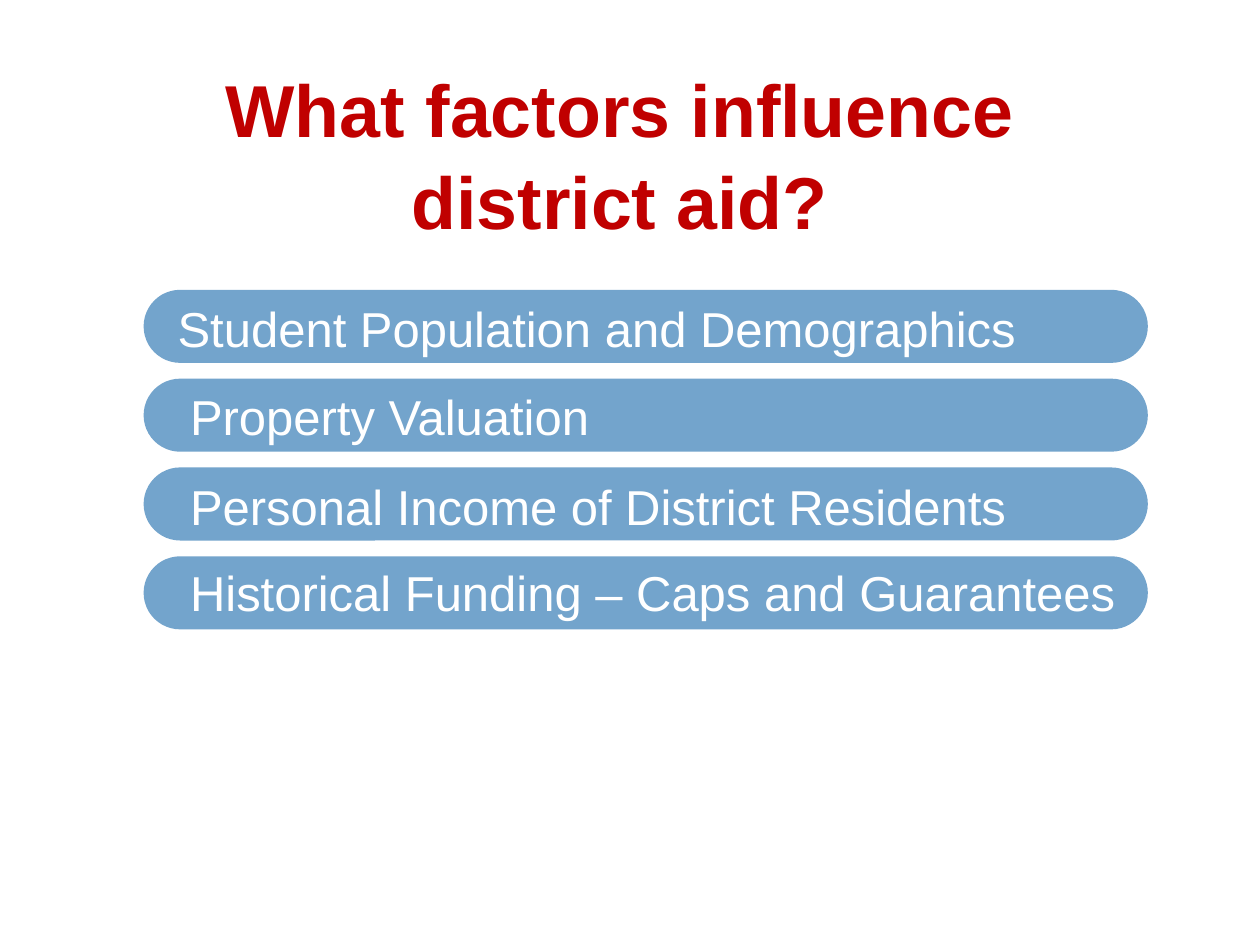
from dataclasses import dataclass

import pptx
import pptx.dml.color
import pptx.enum.shapes
import pptx.enum.text
import pptx.util

Inches = pptx.util.Inches
Align = pptx.enum.text.PP_ALIGN


@dataclass
class Label:
    text: str
    left: float
    top: float
    width: float
    height: float
    size: int = 28
    color: str = "FFFFFF"
    bold: bool = False
    align: Align = Align.LEFT
    inset_x: float = 0.1
    inset_y: float = 0.05


def color_of(value: str) -> pptx.dml.color.RGBColor:
    return pptx.dml.color.RGBColor.from_string(value)


def draw_label(slide, label: Label) -> None:
    shape = slide.shapes.add_textbox(
        Inches(label.left), Inches(label.top), Inches(label.width), Inches(label.height)
    )
    frame = shape.text_frame
    frame.word_wrap = True
    frame.vertical_anchor = pptx.enum.text.MSO_ANCHOR.MIDDLE
    frame.margin_left = frame.margin_right = Inches(label.inset_x)
    frame.margin_top = frame.margin_bottom = Inches(label.inset_y)
    paragraph = frame.paragraphs[0]
    paragraph.alignment = label.align
    paragraph.line_spacing = 1.05
    for index, line in enumerate(label.text.split("\n")):
        if index:
            paragraph.add_line_break()
        run = paragraph.add_run()
        run.text = line
        run.font.name = "Arial"
        run.font.size = pptx.util.Pt(label.size)
        run.font.bold = label.bold
        run.font.color.rgb = color_of(label.color)


def draw_bar(slide, top: float) -> None:
    shape = slide.shapes.add_shape(
        pptx.enum.shapes.MSO_SHAPE.ROUNDED_RECTANGLE,
        Inches(1.14), Inches(top), Inches(7.97), Inches(BAR_HEIGHT),
    )
    shape.adjustments[0] = 0.5
    shape.shadow.inherit = False
    shape.fill.solid()
    shape.fill.fore_color.rgb = color_of("73A4CC")
    shape.line.fill.background()


BAR_TOP = 2.3
BAR_PITCH = 0.705
BAR_HEIGHT = 0.58

TITLE = Label(
    "What factors influence \ndistrict aid? ", 0.5, 0.5, 9, 1.41,
    size=42, color="C00000", bold=True, align=Align.CENTER, inset_x=0, inset_y=0,
)
FACTORS = [
    Label("Student Population and Demographics", 1.41, 2.34, 7.58, 0.5, inset_x=0, inset_y=0),
    Label("Property Valuation", 1.41, 3, 7.58, BAR_HEIGHT),
    Label("Personal Income of District Residents", 1.41, 3.71, 6.91, BAR_HEIGHT),
    Label("Historical Funding – Caps and Guarantees", 1.41, 4.4, 7.69, BAR_HEIGHT),
]


def main() -> None:
    presentation = pptx.Presentation()
    presentation.slide_width = Inches(10)
    presentation.slide_height = Inches(7.5)
    slide = presentation.slides.add_slide(presentation.slide_layouts[6])
    draw_label(slide, TITLE)
    for index in range(len(FACTORS)):
        draw_bar(slide, BAR_TOP + index * BAR_PITCH)
    for factor in FACTORS:
        draw_label(slide, factor)
    presentation.save("out.pptx")


if __name__ == "__main__":
    main()
